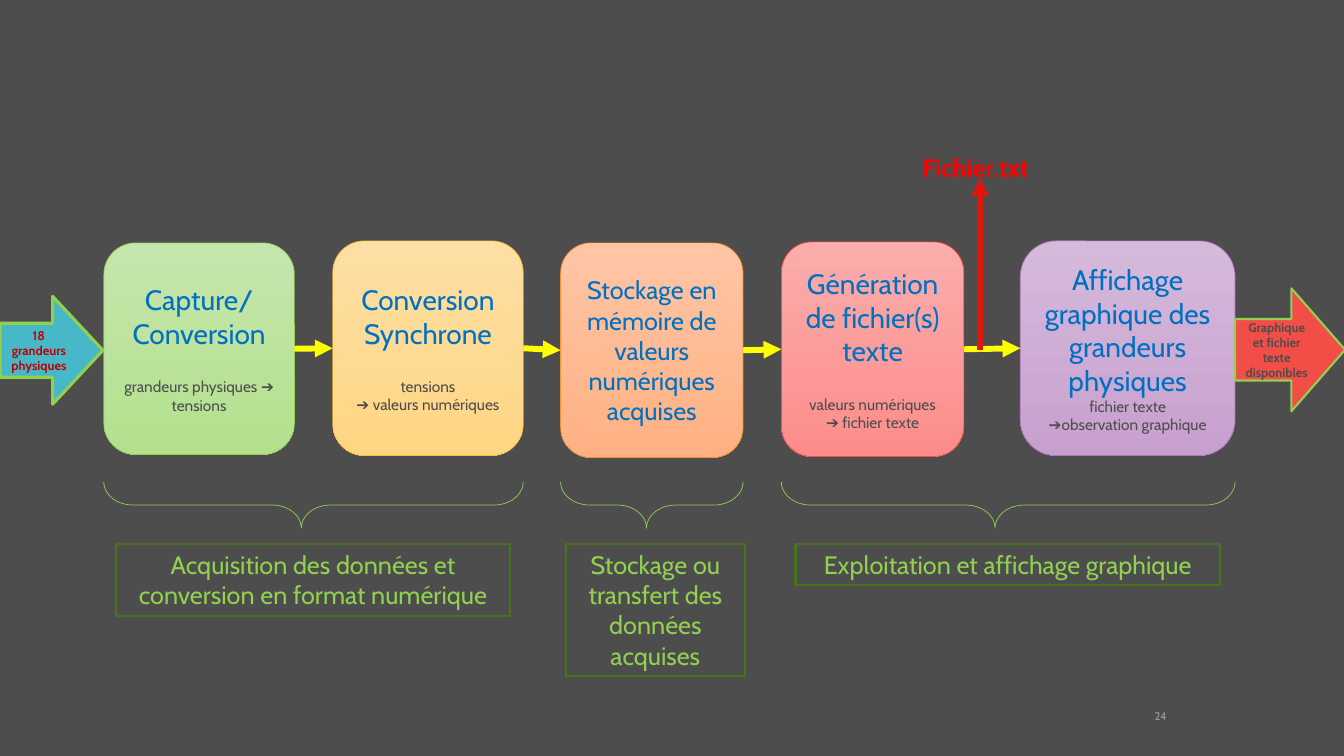
"""Build the slide showing the data acquisition chain, from capture to display."""
from dataclasses import dataclass
from itertools import pairwise

from lxml.etree import SubElement
from pptx import Presentation
from pptx.dml.color import RGBColor
from pptx.enum.shapes import MSO_CONNECTOR as Connector, MSO_SHAPE as Shape
from pptx.enum.text import MSO_ANCHOR as Anchor, PP_ALIGN as Align
from pptx.oxml.ns import qn
from pptx.util import Inches, Pt


@dataclass(frozen=True)
class Theme:
    font: str = "Cabin"
    background: str = "4D4D4D"
    heading: str = "0070C0"
    detail: str = "4D4D4D"
    accent: str = "92D050"
    frame: str = "49721E"
    flow: str = "FFFF00"
    input_fill: str = "47B8C7"
    input_text: str = "C00000"
    output_fill: str = "F34D47"
    file_text: str = "FF0000"
    file_arrow: str = "DD160E"
    number: str = "9C9C9C"
    heading_size: float = 20
    label_size: float = 18
    detail_size: float = 11
    arrow_size: float = 9
    number_size: float = 8
    detail_gap: float = 19.5
    thin: float = 0.5
    medium: float = 1.5
    bold: float = 2.25
    thick: float = 4.25


class ChainSlide:
    def __init__(self, presentation, theme):
        self.theme = theme
        self.slide = presentation.slides.add_slide(presentation.slide_layouts[6])
        self.slide.background.fill.solid()
        self.slide.background.fill.fore_color.rgb = RGBColor.from_string(theme.background)

    def add_text(self, paragraph, text, size, color, bold=False, align=Align.CENTER):
        paragraph.alignment = align
        for index, line in enumerate(text.split("\n")):
            if index:
                paragraph.add_line_break()
            run = paragraph.add_run()
            run.text = line
            run.font.name = self.theme.font
            run.font.size = Pt(size)
            run.font.bold = bold
            run.font.color.rgb = RGBColor.from_string(color)

    def outline(self, kind, left, top, width, height, color, weight):
        shape = self.slide.shapes.add_shape(
            kind, Inches(left), Inches(top), Inches(width), Inches(height))
        shape.shadow.inherit = False
        shape.fill.background()
        shape.line.color.rgb = RGBColor.from_string(color)
        shape.line.width = Pt(weight)
        shape.text_frame.word_wrap = True
        shape.text_frame.vertical_anchor = Anchor.MIDDLE
        return shape

    def step(self, left, top, width, height, colors, heading, size, detail):
        light, dark, border = colors
        box = self.outline(Shape.ROUNDED_RECTANGLE, left, top, width, height,
                           border, self.theme.thin)
        box.fill.gradient()
        box.fill.gradient_angle = 270
        for stop, color in zip(box.fill.gradient_stops, (light, dark)):
            stop.color.rgb = RGBColor.from_string(color)
        frame = box.text_frame
        self.add_text(frame.paragraphs[0], heading, size, self.theme.heading)
        if detail:
            text, gap = detail
            paragraph = frame.add_paragraph()
            paragraph.space_before = Pt(gap)
            self.add_text(paragraph, text, self.theme.detail_size, self.theme.detail)
        return box

    def block_arrow(self, left, top, width, height, fill, weight, text, color):
        arrow = self.outline(Shape.RIGHT_ARROW, left, top, width, height,
                             self.theme.accent, weight)
        arrow.adjustments[1] = 0.488
        arrow.fill.solid()
        arrow.fill.fore_color.rgb = RGBColor.from_string(fill)
        self.add_text(arrow.text_frame.paragraphs[0], text, self.theme.arrow_size, color, True)

    def arrow(self, start, end, color):
        connector = self.slide.shapes.add_connector(
            Connector.STRAIGHT, *(Inches(value) for value in (*start, *end)))
        connector.line.color.rgb = RGBColor.from_string(color)
        connector.line.width = Pt(self.theme.thick)
        properties = connector._element.spPr
        SubElement(properties.find(qn("a:ln")), qn("a:tailEnd"), type="triangle")
        SubElement(properties, qn("a:effectLst"))
        return connector

    def link(self, source, target):
        connector = self.arrow((0, 0), (0, 0), self.theme.flow)
        connector.begin_connect(source, 3)
        connector.end_connect(target, 1)

    def brace(self, left, right):
        depth, length, middle = 0.46, right - left, 5.01
        brace = self.outline(Shape.LEFT_BRACE, (left + right - depth) / 2,
                             middle - length / 2, depth, length,
                             self.theme.accent, self.theme.thin)
        brace.rotation = 270
        brace.adjustments[0] = 0.63
        brace.adjustments[1] = 0.471

    def phase(self, left, width, height, text):
        box = self.outline(Shape.RECTANGLE, left, 5.4, width, height,
                           self.theme.frame, self.theme.medium)
        box.text_frame.vertical_anchor = Anchor.TOP
        self.add_text(box.text_frame.paragraphs[0], text, self.theme.label_size, self.theme.accent)

    def label(self, left, top, width, height, text, size, color, bold, align, anchor):
        box = self.slide.shapes.add_textbox(
            Inches(left), Inches(top), Inches(width), Inches(height))
        box.text_frame.word_wrap = True
        box.text_frame.vertical_anchor = anchor
        self.add_text(box.text_frame.paragraphs[0], text, size, color, bold, align)


def main():
    presentation = Presentation()
    presentation.slide_width = Inches(13.33)
    presentation.slide_height = Inches(7.5)
    theme = Theme()
    chain = ChainSlide(presentation, theme)
    large, gap = theme.heading_size, theme.detail_gap

    steps = [
        (1.03, 2.41, 1.89, 2.1, ("C6E6AD", "B3E08D", "92D050"),
         "Capture/\nConversion", large, ("grandeurs physiques ➔ tensions", gap)),
        (3.3, 2.39, 1.89, 2.13, ("FDDFA5", "FFD683", "F7C331"),
         "Conversion\nSynchrone", large, ("tensions\n➔ valeurs numériques", gap)),
        (5.56, 2.41, 1.81, 2.13, ("FFC5A5", "FFB183", "FA8F30"),
         "Stockage en mémoire de valeurs numériques acquises", theme.label_size, None),
        (7.75, 2.4, 1.81, 2.13, ("FBADAC", "FC8D8A", "F34D47"),
         "Génération de fichier(s) texte", large, ("valeurs numériques\n➔ fichier texte", gap)),
        (10.12, 2.39, 2.13, 2.13, ("D5BADB", "C8A0CF", "B074BA"),
         "Affichage graphique des grandeurs physiques", large,
         ("fichier texte\n➔observation graphique", 0)),
    ]
    boxes = [chain.step(*step) for step in steps]
    for source, target in pairwise(boxes):
        chain.link(source, target)

    chain.block_arrow(0, 2.94, 1.02, 1.07, theme.input_fill, theme.bold,
                      "18 grandeurs physiques", theme.input_text)
    chain.block_arrow(12.25, 2.86, 1.09, 1.22, theme.output_fill, theme.medium,
                      "Graphique et fichier texte disponibles", theme.detail)
    chain.label(9.05, 1.46, 1.34, 0.4, "Fichier.txt", theme.label_size,
                theme.file_text, True, Align.LEFT, Anchor.TOP)
    chain.arrow((9.72, 3.47), (9.72, 1.77), theme.file_arrow)

    for left, right in ((1.03, 5.19), (5.56, 7.37), (7.75, 12.25)):
        chain.brace(left, right)
    chain.phase(1.15, 3.91, 0.71, "Acquisition des données et conversion en format numérique")
    chain.phase(5.61, 1.78, 1.31, "Stockage ou transfert des données acquises")
    chain.phase(7.89, 4.21, 0.4, "Exploitation et affichage graphique")
    chain.label(10.75, 6.96, 0.92, 0.28, "24", theme.number_size,
                theme.number, False, Align.RIGHT, Anchor.MIDDLE)
    presentation.save("out.pptx")


if __name__ == "__main__":
    main()
